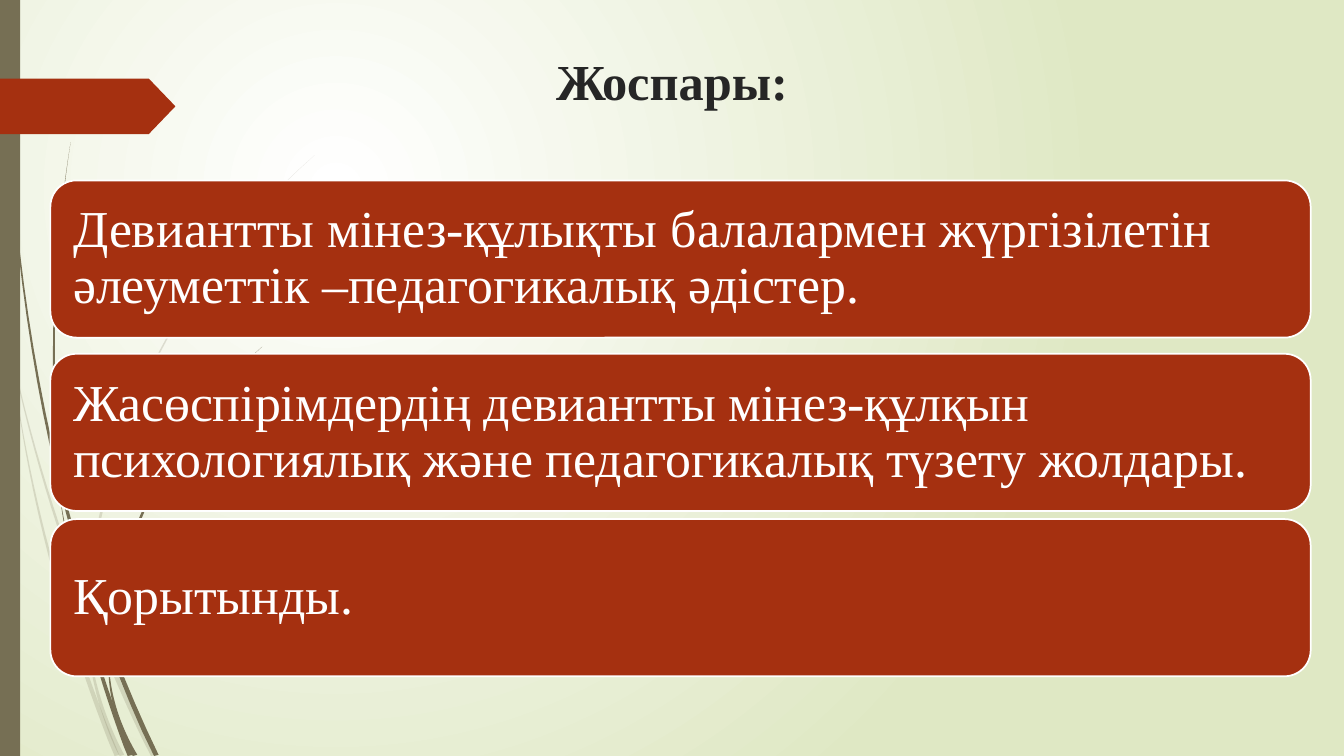
"""Build the plan slide: two tufts of grass, a title and three cards."""
import dataclasses
import math
import typing

import lxml.etree
import pptx
import pptx.dml.color
import pptx.enum.shapes
import pptx.enum.text
import pptx.oxml.ns
import pptx.util

COLS, ROWS = 1333, 750
CELL = pptx.util.Inches(0.01)
STEPS = 24
HUES = {"olive": "766F54", "rust": "A53010", "white": "FFFFFF", "lime": "DFE8C4", "ink": "262626"}
KINDS = pptx.enum.shapes.MSO_SHAPE
ALIGN = pptx.enum.text.PP_ALIGN
ANCHOR = pptx.enum.text.MSO_ANCHOR
QN = pptx.oxml.ns.qn
Point = tuple[float, float]


@dataclasses.dataclass(frozen=True)
class Block:
    kind: typing.Any
    col: int
    row: int
    wide: int
    high: int
    hue: str
    bend: float | None = None


@dataclasses.dataclass(frozen=True)
class Card:
    row: int
    text: str


@dataclasses.dataclass(frozen=True)
class Blade:
    tip: Point
    mid: Point
    foot: Point
    girth: float


@dataclasses.dataclass(frozen=True)
class Tuft:
    alpha: int
    blades: list[Blade]


TUFTS = [
    Tuft(20, [
        Blade((0, 290), (58, 522), (152, ROWS), 5),
        Blade((11, 350), (49, 550), (116, ROWS), 5),
        Blade((84, 592), (94, 676), (121, ROWS), 5),
        Blade((312, 154), (159, 348), (86, 590), 3),
    ]),
    Tuft(100, [
        Blade((4, 0), (44, 410), (155, ROWS), 5),
        Blade((57, 477), (85, 615), (129, ROWS), 5),
        Blade((108, 645), (113, 698), (134, ROWS), 5),
        Blade((70, 141), (54, 310), (60, 472), 3),
        Blade((260, 344), (157, 475), (108, 640), 4),
    ]),
]
TRIM = [
    Block(KINDS.RECTANGLE, 0, 0, 20, ROWS, "olive"),
    Block(KINDS.PENTAGON, 0, 78, 174, 55, "rust", 0.48),
]
CARDS = [
    Card(179, "Девиантты мінез-құлықты балалармен жүргізілетін әлеуметтік –педагогикалық әдістер."),
    Card(351, "Жасөспірімдердің девиантты мінез-құлқын психологиялық және педагогикалық түзету жолдары."),
    Card(515, "Қорытынды."),
]
HEAD = {"name": "Times New Roman", "size": pptx.util.Pt(36), "bold": True}
BODY = {"name": "Times New Roman", "size": pptx.util.Pt(37), "bold": False}
INSET = {f"margin_{side}": 15 * CELL for side in ("left", "top", "right", "bottom")}


def tint(hue: str) -> pptx.dml.color.RGBColor:
    return pptx.dml.color.RGBColor.from_string(HUES[hue])


def apply(thing: typing.Any, values: dict[str, typing.Any]) -> None:
    for key, value in values.items():
        setattr(thing, key, value)


def paint(shape: typing.Any, hue: str) -> None:
    shape.shadow.inherit = False
    shape.fill.solid()
    shape.fill.fore_color.rgb = tint(hue)
    shape.line.fill.background()


def wash(slide: typing.Any) -> None:
    fill = slide.background.fill
    fill.gradient()
    for stop, place, hue in zip(fill.gradient_stops, (0, 1), ("white", "lime")):
        stop.position = place
        stop.color.rgb = tint(hue)
    line = next(slide.background._cSld.iter(QN("a:lin")))
    grad = line.getparent()
    grad.remove(line)
    ring = lxml.etree.SubElement(grad, QN("a:path"), {"path": "circle"})
    edges = {"l": "50000", "t": "50000", "r": "100000", "b": "100000"}
    lxml.etree.SubElement(ring, QN("a:fillToRect"), edges)


def trace(blade: Blade) -> list[Point]:
    """Outline a quadratic curve through mid that widens from tip to foot."""
    (ax, ay), (mx, my), (bx, by) = blade.tip, blade.mid, blade.foot
    px, py = 2 * mx - (ax + bx) / 2, 2 * my - (ay + by) / 2
    left, right = [], []
    for step in range(STEPS + 1):
        t = step / STEPS
        s = 1 - t
        x = s * s * ax + 2 * s * t * px + t * t * bx
        y = s * s * ay + 2 * s * t * py + t * t * by
        dx = s * (px - ax) + t * (bx - px)
        dy = s * (py - ay) + t * (by - py)
        half = blade.girth * t / 2 / math.hypot(dx, dy)
        left.append((x - dy * half, y + dx * half))
        right.append((x + dy * half, y - dx * half))
    return left + right[::-1]


def grow(slide: typing.Any, blade: Blade, alpha: int) -> None:
    dots = [(round(x * CELL), round(min(y, ROWS) * CELL)) for x, y in trace(blade)]
    pen = slide.shapes.build_freeform(*dots[0])
    pen.add_line_segments(dots[1:], close=True)
    shape = pen.convert_to_shape()
    paint(shape, "olive")
    color = shape.fill._xPr.find(QN("a:solidFill"))[0]
    lxml.etree.SubElement(color, QN("a:alpha"), {"val": str(alpha * 1000)})


def place(slide: typing.Any, block: Block) -> typing.Any:
    spots = (block.col, block.row, block.wide, block.high)
    shape = slide.shapes.add_shape(block.kind, *(spot * CELL for spot in spots))
    paint(shape, block.hue)
    if block.bend is not None:
        shape.adjustments[0] = block.bend
    return shape


def write(shape: typing.Any, text: str, font: dict, hue: str, align: typing.Any) -> typing.Any:
    frame = shape.text_frame
    frame.word_wrap = True
    line = frame.paragraphs[0]
    line.alignment = align
    run = line.add_run()
    run.text = text
    apply(run.font, font)
    run.font.color.rgb = tint(hue)
    return frame


def deal(slide: typing.Any, card: Card) -> None:
    shape = place(slide, Block(KINDS.ROUNDED_RECTANGLE, 50, card.row, 1250, 156, "rust"))
    shape.line.color.rgb = tint("white")
    shape.line.width = pptx.util.Pt(1.25)
    frame = write(shape, card.text, BODY, "white", ALIGN.LEFT)
    apply(frame, INSET | {"vertical_anchor": ANCHOR.MIDDLE})
    frame.paragraphs[0].line_spacing = 0.9


def main() -> None:
    deck = pptx.Presentation()
    deck.slide_width, deck.slide_height = COLS * CELL, ROWS * CELL
    slide = deck.slides.add_slide(deck.slide_layouts[6])
    wash(slide)
    for tuft in TUFTS:
        for blade in tuft.blades:
            grow(slide, blade, tuft.alpha)
    for block in TRIM:
        place(slide, block)
    title = slide.shapes.add_textbox(179 * CELL, 45 * CELL, 975 * CELL, 140 * CELL)
    write(title, "Жоспары:", HEAD, "ink", ALIGN.CENTER)
    for card in CARDS:
        deal(slide, card)
    deck.save("out.pptx")


if __name__ == "__main__":
    main()
